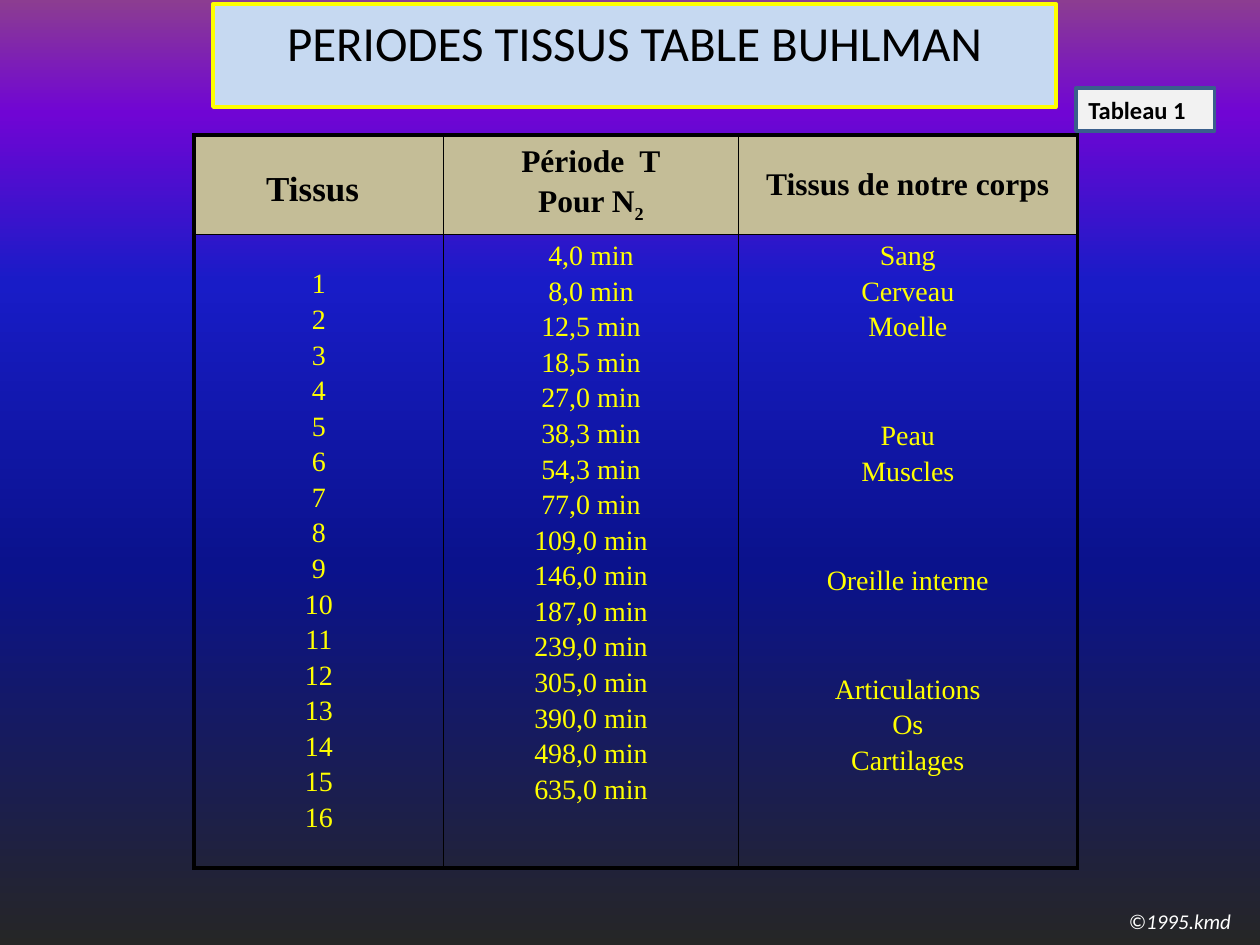
from lxml import etree
from pptx import Presentation
from pptx.dml.color import RGBColor
from pptx.enum import shapes, text
from pptx.oxml import ns
from pptx.util import Inches, Pt

BLACK = RGBColor(0x00, 0x00, 0x00)
WHITE = RGBColor(0xFF, 0xFF, 0xFF)
YELLOW = RGBColor(0xFF, 0xFF, 0x00)
TAN = RGBColor(0xC4, 0xBD, 0x97)
PALE_BLUE = RGBColor(0xC6, 0xD9, 0xF1)
PALE_GRAY = RGBColor(0xF2, 0xF2, 0xF2)
STEEL = RGBColor(0x3A, 0x5F, 0x8C)
GRADIENT = [  # position in percent, from bottom to top
    (0, RGBColor(0x26, 0x26, 0x26)),
    (40, RGBColor(0x0A, 0x12, 0x8C)),
    (70, RGBColor(0x18, 0x1C, 0xC7)),
    (88, RGBColor(0x70, 0x05, 0xD4)),
    (100, RGBColor(0x8C, 0x3D, 0x91)),
]
SERIF, SANS = "Times New Roman", "Calibri"
CENTER = text.PP_ALIGN.CENTER
MIDDLE, TOP = text.MSO_ANCHOR.MIDDLE, text.MSO_ANCHOR.TOP

# Each header line is a list of (text, extra run format).
HEADERS = [
    [[("Tissus", {"size": 20}), (" ", {"size": 28})]],
    [[("Période  T", {})], [("Pour N", {}), ("2", {"baseline": -25})]],
    [[("Tissus de notre corps", {})]],
]
PERIODS = ["4,0", "8,0", "12,5", "18,5", "27,0", "38,3", "54,3", "77,0", "109,0",
           "146,0", "187,0", "239,0", "305,0", "390,0", "498,0", "635,0"]
BODY_PARTS = {1: "Sang", 2: "Cerveau", 3: "Moelle", 6: "Peau", 7: "Muscles",
              10: "Oreille interne", 13: "Articulations", 14: "Os", 15: "Cartilages"}
COLUMN_WIDTHS = [1.98, 2.34, 2.69]
ROW_HEIGHTS = [0.79, 5.03]
LINE_STEP, LINE_GAP = 20.95, 2.55  # points between tissue lines, and space above one
THICK, THIN = 2.25, 1


def write(frame, lines, size, color, font=SANS, bold=False, italic=False,
          align=None, gaps=None):
    """Fill a text frame; a line is a string or a list of (text, run format)."""
    for index, line in enumerate(lines):
        paragraph = frame.paragraphs[0] if index == 0 else frame.add_paragraph()
        paragraph.alignment = align
        if gaps:
            paragraph.space_before = Pt(gaps[index])
        for content, extra in [(line, {})] if isinstance(line, str) else line:
            run = paragraph.add_run()
            run.text = content
            run.font.name = font
            run.font.size = Pt(extra.get("size", size))
            run.font.bold, run.font.italic = bold, italic
            run.font.color.rgb = color
            if "baseline" in extra:
                run.font._element.set("baseline", str(extra["baseline"] * 1000))


def add_box(slide, place, fill, line):
    box = slide.shapes.add_shape(shapes.MSO_SHAPE.RECTANGLE, *map(Inches, place))
    box.shadow.inherit = False
    box.fill.solid()
    box.fill.fore_color.rgb = fill
    box.line.color.rgb = line
    box.line.width = Pt(2)
    box.text_frame.word_wrap = True
    return box


def set_background(slide):
    properties = slide.background.fill._xPr
    for child in list(properties):
        properties.remove(child)
    gradient = etree.SubElement(properties, ns.qn("a:gradFill"), rotWithShape="1")
    stops = etree.SubElement(gradient, ns.qn("a:gsLst"))
    for position, color in GRADIENT:
        stop = etree.SubElement(stops, ns.qn("a:gs"), pos=str(position * 1000))
        etree.SubElement(stop, ns.qn("a:srgbClr"), val=str(color))
    etree.SubElement(gradient, ns.qn("a:lin"), ang=str(270 * 60000), scaled="0")
    etree.SubElement(properties, ns.qn("a:effectLst"))


def set_borders(cell, widths):
    properties = cell._tc.get_or_add_tcPr()
    for index, (side, width) in enumerate(widths.items()):
        line = etree.Element(ns.qn(f"a:ln{side}"), w=str(int(Pt(width))))
        fill = etree.SubElement(line, ns.qn("a:solidFill"))
        etree.SubElement(fill, ns.qn("a:srgbClr"), val=str(BLACK))
        properties.insert(index, line)


def add_tissue_table(slide):
    frame = slide.shapes.add_table(2, 3, Inches(1.54), Inches(1.07),
                                   Inches(sum(COLUMN_WIDTHS)), Inches(sum(ROW_HEIGHTS)))
    table = frame.table
    table.horz_banding = False
    for row, height in zip(table.rows, ROW_HEIGHTS):
        row.height = Inches(height)
    for column, width in zip(table.columns, COLUMN_WIDTHS):
        column.width = Inches(width)

    part_rows = list(BODY_PARTS)
    part_gaps = [LINE_GAP + (row - previous - 1) * LINE_STEP
                 for previous, row in zip([0] + part_rows, part_rows)]
    even_gaps = [LINE_GAP] * len(PERIODS)
    body = [
        ([str(number + 1) for number in range(len(PERIODS))], even_gaps, MIDDLE),
        ([f"{period} min" for period in PERIODS], even_gaps, TOP),
        (list(BODY_PARTS.values()), part_gaps, TOP),
    ]
    for index, (header, (lines, gaps, anchor)) in enumerate(zip(HEADERS, body)):
        head_cell, body_cell = table.cell(0, index), table.cell(1, index)
        head_cell.fill.solid()
        head_cell.fill.fore_color.rgb = TAN
        head_cell.vertical_anchor = MIDDLE
        write(head_cell.text_frame, header, 18, BLACK, font=SERIF, bold=True,
              align=CENTER, gaps=[3] * len(header))
        body_cell.fill.background()
        body_cell.vertical_anchor = anchor
        write(body_cell.text_frame, lines, 16, YELLOW, font=SERIF,
              align=CENTER, gaps=gaps)
        left = THICK if index == 0 else THIN
        right = THICK if index == len(HEADERS) - 1 else THIN
        set_borders(head_cell, {"L": left, "R": right, "T": THICK, "B": THIN})
        set_borders(body_cell, {"L": left, "R": right, "T": THIN, "B": THICK})


def main():
    presentation = Presentation()
    presentation.slide_width, presentation.slide_height = Inches(10), Inches(7.5)
    slide = presentation.slides.add_slide(presentation.slide_layouts[6])
    set_background(slide)

    label = add_box(slide, (8.54, 0.7, 1.1, 0.34), PALE_GRAY, STEEL)
    label.text_frame.vertical_anchor = MIDDLE
    write(label.text_frame, ["Tableau 1"], 14, BLACK, bold=True,
          align=text.PP_ALIGN.LEFT)

    add_tissue_table(slide)

    title = add_box(slide, (1.69, 0.03, 6.69, 0.82), PALE_BLUE, YELLOW)
    title.text_frame.vertical_anchor = TOP
    title.text_frame.margin_top = Inches(0.07)
    write(title.text_frame, ["PERIODES TISSUS TABLE BUHLMAN"], 28, BLACK, align=CENTER)

    credit = slide.shapes.add_textbox(*map(Inches, (8.86, 7.16, 1.02, 0.3)))
    credit.text_frame.word_wrap = False
    write(credit.text_frame, ["©1995.kmd"], 12, WHITE, italic=True)

    presentation.save("out.pptx")


if __name__ == "__main__":
    main()
